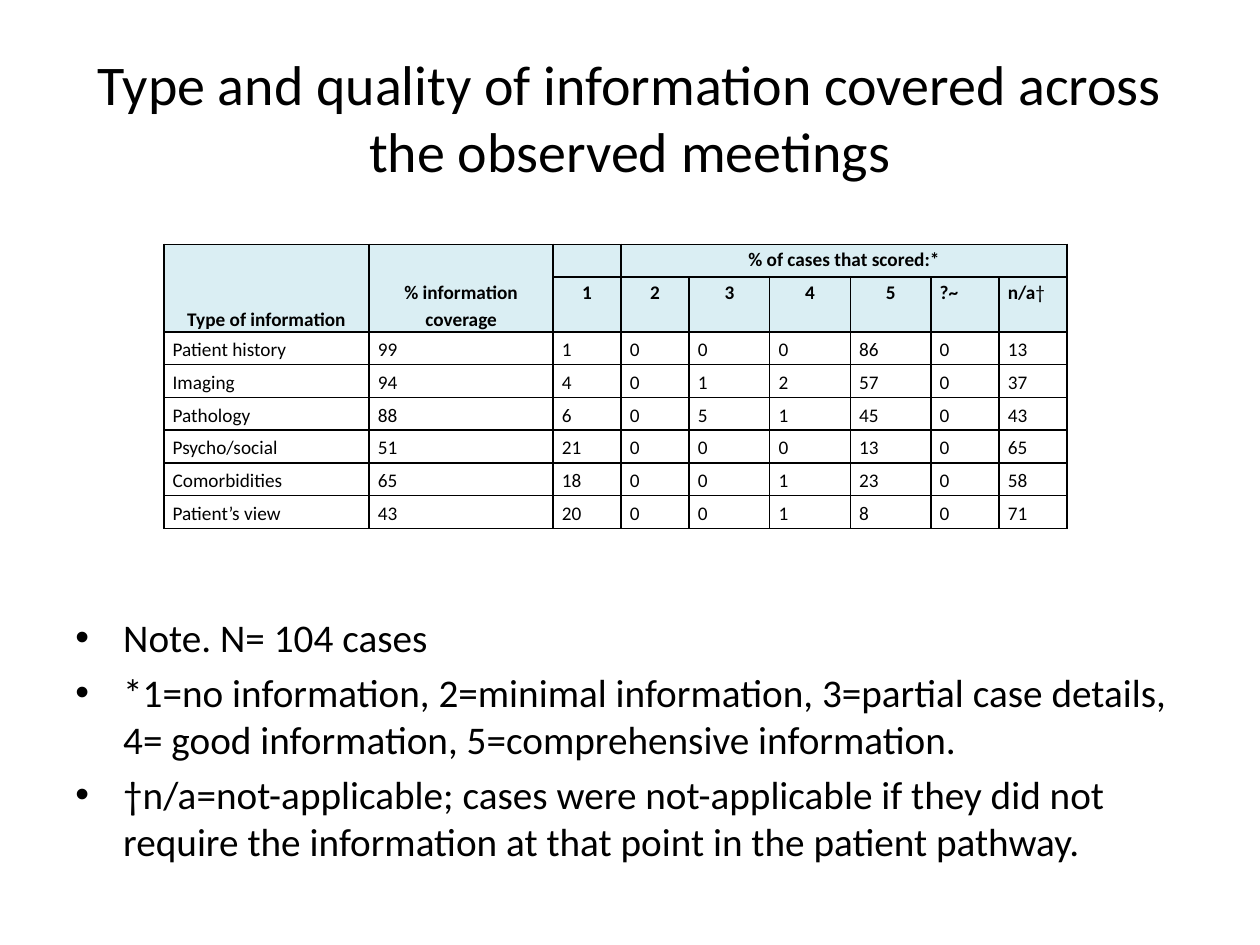
"""Build the slide on information coverage across the observed meetings."""
import dataclasses

import lxml.etree
import pptx
import pptx.dml.color
import pptx.enum.text
import pptx.oxml.ns
import pptx.util

Inches = pptx.util.Inches
Align = pptx.enum.text.PP_ALIGN
Anchor = pptx.enum.text.MSO_ANCHOR
qn = pptx.oxml.ns.qn

FONT = "Calibri"
COLORS = {"text": "000000", "border": "000000", "header": "DAEEF3"}
COLUMN_WIDTHS = [1.63, 1.46, 0.54, 0.54, 0.64, 0.64, 0.64, 0.54, 0.54]
ROW_HEIGHT = 0.26
SCORES = ["1", "2", "3", "4", "5", "?~"]
NOTES = [
    "Note. N= 104 cases",
    "*1=no information, 2=minimal information, 3=partial case details, "
    "4= good information, 5=comprehensive information.",
    "†n/a=not-applicable; cases were not-applicable if they did not "
    "require the information at that point in the patient pathway.",
]


@dataclasses.dataclass
class InformationType:
    """One body row: the kind of information, its coverage and its score shares."""
    name: str
    coverage: int
    shares: list[int]


INFORMATION_TYPES = [
    InformationType("Patient history", 99, [1, 0, 0, 0, 86, 0, 13]),
    InformationType("Imaging", 94, [4, 0, 1, 2, 57, 0, 37]),
    InformationType("Pathology", 88, [6, 0, 5, 1, 45, 0, 43]),
    InformationType("Psycho/social", 51, [21, 0, 0, 0, 13, 0, 65]),
    InformationType("Comorbidities", 65, [18, 0, 0, 1, 23, 0, 58]),
    InformationType("Patient’s view", 43, [20, 0, 0, 1, 8, 0, 71]),
]


def format_span(span, size: float, bold: bool = False) -> None:
    span.font.name = FONT
    span.font.size = pptx.util.Pt(size)
    span.font.bold = bold
    span.font.color.rgb = pptx.dml.color.RGBColor.from_string(COLORS["text"])


def add_borders(cell) -> None:
    properties = cell._tc.get_or_add_tcPr()
    for side in ("a:lnL", "a:lnR", "a:lnT", "a:lnB"):
        line = lxml.etree.SubElement(properties, qn(side), w=str(pptx.util.Pt(1)))
        fill = lxml.etree.SubElement(line, qn("a:solidFill"))
        lxml.etree.SubElement(fill, qn("a:srgbClr"), val=COLORS["border"])


def style_cell(cell, header: bool) -> None:
    add_borders(cell)
    cell.margin_left = cell.margin_right = Inches(0.07)
    cell.margin_top = cell.margin_bottom = 0
    if header:
        cell.fill.solid()
        cell.fill.fore_color.rgb = pptx.dml.color.RGBColor.from_string(COLORS["header"])
    else:
        cell.fill.background()
    para = cell.text_frame.paragraphs[0]
    lxml.etree.SubElement(para._p, qn("a:endParaRPr"), sz="1100")


def write_cell(cell, text: str, anchor: Anchor, align: Align = Align.LEFT,
               bold: bool = False) -> None:
    cell.vertical_anchor = anchor
    para = cell.text_frame.paragraphs[0]
    para.text = text
    para.alignment = align
    para.line_spacing = 1.15
    format_span(para.runs[0], 11, bold)


def add_coverage_table(slide) -> None:
    rows = len(INFORMATION_TYPES) + 2
    frame = slide.shapes.add_table(
        rows, len(COLUMN_WIDTHS), Inches(1.3), Inches(1.94),
        Inches(sum(COLUMN_WIDTHS)), Inches(ROW_HEIGHT * rows))
    table = frame.table
    for column, width in zip(table.columns, COLUMN_WIDTHS):
        column.width = Inches(width)
    for index, row in enumerate(table.rows):
        row.height = Inches(ROW_HEIGHT)
        for cell in row.cells:
            style_cell(cell, header=index < 2)

    for column, heading in enumerate(["Type of information", "% information coverage"]):
        table.cell(0, column).merge(table.cell(1, column))
        write_cell(table.cell(0, column), heading, Anchor.BOTTOM, Align.CENTER, True)
    table.cell(0, 3).merge(table.cell(0, 8))
    write_cell(table.cell(0, 3), "% of cases that scored:*", Anchor.TOP, Align.CENTER, True)
    for column, score in enumerate(SCORES, start=2):
        align = Align.CENTER if score.isdigit() else Align.LEFT
        write_cell(table.cell(1, column), score, Anchor.TOP, align, True)
    write_cell(table.cell(1, 8), "n/a", Anchor.TOP, bold=True)
    dagger = table.cell(1, 8).text_frame.paragraphs[0].add_run()
    dagger.text = "†"
    format_span(dagger, 11)

    for row, item in enumerate(INFORMATION_TYPES, start=2):
        for column, value in enumerate([item.name, item.coverage, *item.shares]):
            write_cell(table.cell(row, column), str(value), Anchor.MIDDLE)


def add_notes_list(slide) -> None:
    box = slide.shapes.add_textbox(Inches(0.5), Inches(4.82), Inches(9), Inches(2.1))
    box.text_frame.word_wrap = True
    box.text_frame.text = "\n".join(NOTES)
    for para in box.text_frame.paragraphs:
        para.space_after = pptx.util.Pt(4.5)
        properties = para._p.get_or_add_pPr()
        properties.set("marL", str(Inches(0.38)))
        properties.set("indent", str(Inches(-0.38)))
        lxml.etree.SubElement(properties, qn("a:buFont"), typeface="Arial")
        lxml.etree.SubElement(properties, qn("a:buChar"), char="•")
        format_span(para.runs[0], 22.4)


def main() -> None:
    deck = pptx.Presentation()
    deck.slide_width, deck.slide_height = Inches(10), Inches(7.5)
    slide = deck.slides.add_slide(deck.slide_layouts[5])
    title = slide.shapes.title
    title.left, title.top = Inches(0.5), Inches(0.3)
    title.width, title.height = Inches(9), Inches(1.25)
    title.text_frame.text = (
        "Type and quality of information covered across the observed meetings")
    title.text_frame.vertical_anchor = Anchor.MIDDLE
    para = title.text_frame.paragraphs[0]
    para.alignment = Align.CENTER
    format_span(para.runs[0], 32)
    add_coverage_table(slide)
    add_notes_list(slide)
    deck.save("out.pptx")


if __name__ == "__main__":
    main()
